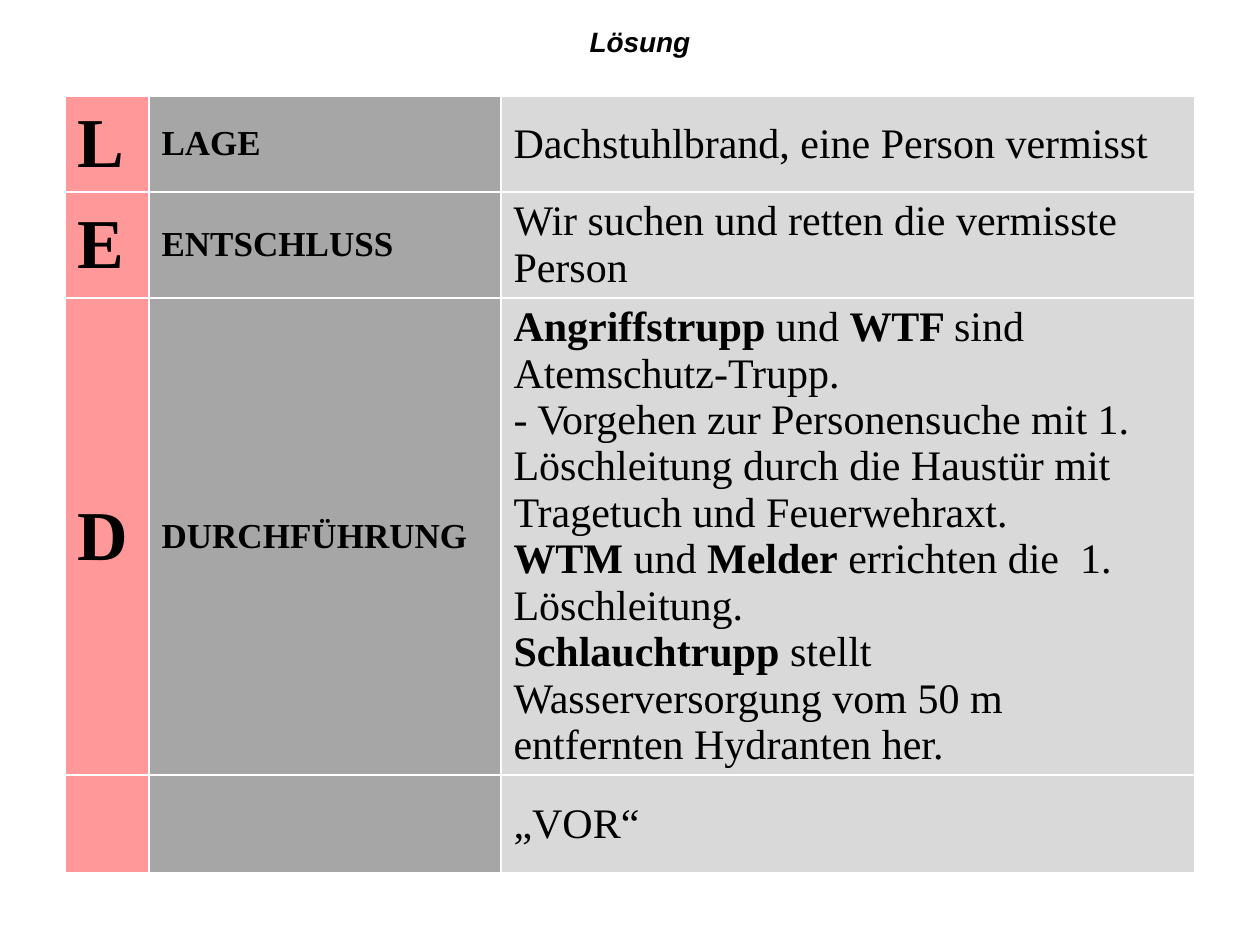
from pptx import Presentation
from pptx.dml.color import RGBColor
from pptx.enum import shapes, text
from pptx.oxml import parse_xml
from pptx.oxml.ns import nsdecls
from pptx.util import Pt

PX = 914400 // 126
COLORS = {"white": "FFFFFF", "black": "000000", "red": "FF9999",
          "gray": "A6A6A6", "light": "D9D9D9"}
SERIF = "Times New Roman"

# Columns: width, fill, text size, bold
COLS = [(84, "red", 40, True), (352, "gray", 20, True), (694, "light", 24, False)]

# Rows: height and cell texts; ** toggles bold, \n starts a paragraph, \v breaks a line
ROWS = [
    (96, "L", "LAGE", "Dachstuhlbrand, eine Person vermisst"),
    (106, "E", "ENTSCHLUSS", "Wir suchen und retten die vermisste Person"),
    (476, "D", "DURCHFÜHRUNG",
     "**Angriffstrupp** und **WTF **sind Atemschutz-Trupp.\n"
     "- Vorgehen zur Personensuche mit 1. Löschleitung durch die Haustür "
     "mit Tragetuch und Feuerwehraxt.\v"
     "**WTM **und **Melder** errichten die  1. Löschleitung.\v"
     "**Schlauchtrupp** stellt Wasserversorgung vom 50 m "
     "entfernten Hydranten her."),
    (96, "", "", "„VOR“"),
]


def px(*vals):
    return [v * PX for v in vals]


def rgb(name):
    return RGBColor.from_string(COLORS[name])


def write(frame, words, size=24, font=SERIF, bold=False, italic=None, align=None):
    frame.vertical_anchor = text.MSO_ANCHOR.MIDDLE
    for i, line in enumerate(words.split("\n")):
        para = frame.add_paragraph() if i else frame.paragraphs[0]
        para.alignment = align
        para.font.size = Pt(size)
        for j, part in enumerate(line.split("\v")):
            if j:
                para.add_line_break()
            for k, bit in enumerate(part.split("**")):
                if not bit:
                    continue
                run = para.add_run()
                run.text = bit
                run.font.size, run.font.name = Pt(size), font
                run.font.bold = bold != (k % 2 == 1)
                run.font.italic = italic
                run.font.color.rgb = rgb("black")


def add_title(slide, words):
    box = slide.shapes.add_shape(shapes.MSO_SHAPE.RECTANGLE, *px(451, 16, 378, 50))
    box.shadow.inherit = False
    box.fill.solid()
    box.fill.fore_color.rgb = rgb("white")
    box.line.fill.background()
    write(box.text_frame, words, size=16, font="Arial", bold=True, italic=True,
          align=text.PP_ALIGN.CENTER)


def style_cell(cell, fill):
    props = cell._tc.get_or_add_tcPr()
    for side in "LRTB":
        props.append(parse_xml(
            f'<a:ln{side} {nsdecls("a")} w="12700"><a:solidFill>'
            f'<a:srgbClr val="{COLORS["white"]}"/></a:solidFill></a:ln{side}>'))
    cell.fill.solid()
    cell.fill.fore_color.rgb = rgb(fill)


def add_grid(slide):
    wide, high = sum(c[0] for c in COLS), sum(r[0] for r in ROWS)
    grid = slide.shapes.add_table(len(ROWS), len(COLS), *px(65, 96, wide, high)).table
    for col, (width, *_) in zip(grid.columns, COLS):
        col.width = width * PX
    for r, (height, *words) in enumerate(ROWS):
        grid.rows[r].height = height * PX
        for c, (_, fill, size, bold) in enumerate(COLS):
            cell = grid.cell(r, c)
            style_cell(cell, fill)
            cell.vertical_anchor = text.MSO_ANCHOR.MIDDLE
            write(cell.text_frame, words[c], size=size, bold=bold)


def main():
    prs = Presentation()
    prs.slide_width, prs.slide_height = px(1260, 945)
    slide = prs.slides.add_slide(prs.slide_layouts[6])
    add_title(slide, "Lösung")
    add_grid(slide)
    prs.save("out.pptx")


if __name__ == "__main__":
    main()
